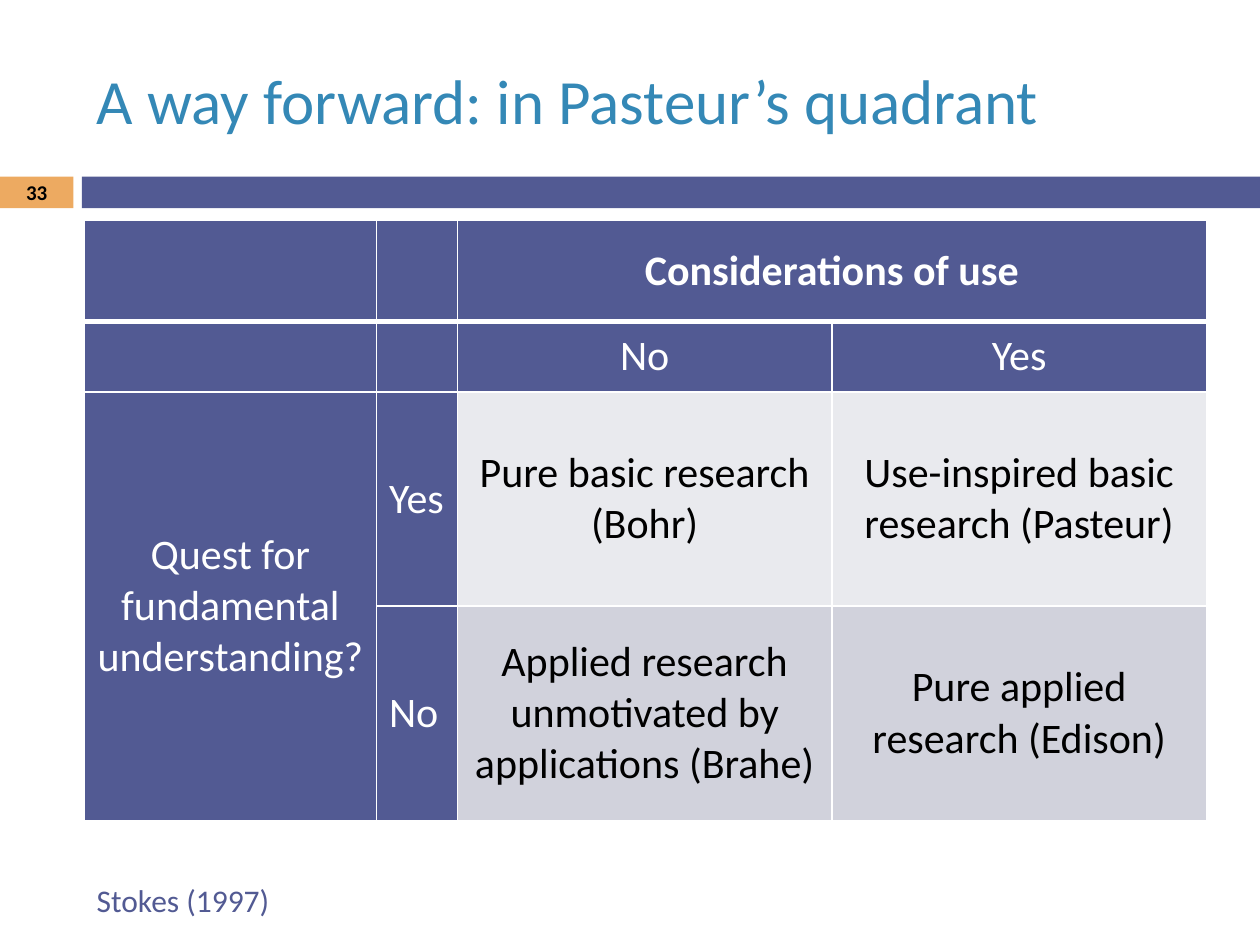
from lxml.etree import SubElement
from pptx import Presentation
from pptx.dml.color import RGBColor
from pptx.enum.shapes import MSO_SHAPE
from pptx.enum.text import MSO_ANCHOR, MSO_AUTO_SIZE, PP_ALIGN
from pptx.oxml.ns import qn
from pptx.util import Cm, Pt

COLORS = {
    "title": "3488B6", "indigo": "525A93", "orange": "EDAA61",
    "upper": "E9EAEE", "lower": "D1D2DC", "white": "FFFFFF", "black": "000000",
}
LEFT, WIDTH = Cm(1.7), Cm(22.66)


def write(frame, text, color, size, bold=False, align=PP_ALIGN.LEFT):
    frame.word_wrap = True
    para = frame.paragraphs[0]
    para.alignment = align
    span = para.add_run()
    span.text = text
    span.font.color.rgb = RGBColor.from_string(COLORS[color])
    formats = {"name": "Calibri", "size": Pt(size), "bold": bold}
    for name, value in formats.items():
        setattr(span.font, name, value)


def draw_borders(cell, bottom_width):
    """Give a cell white borders; call before its fill is set."""
    properties = cell._tc.get_or_add_tcPr()
    for side, width in {"L": 1, "R": 1, "T": 1, "B": bottom_width}.items():
        line = SubElement(properties, qn(f"a:ln{side}"), w=str(Pt(width)))
        fill = SubElement(line, qn("a:solidFill"))
        SubElement(fill, qn("a:srgbClr"), val=COLORS["white"])


deck = Presentation()
deck.slide_width, deck.slide_height = Cm(25.4), Cm(19.05)
page = deck.slides.add_slide(deck.slide_layouts[5])

# Band under the title
for left, width, color in [(0, 1.48, "orange"), (1.65, 23.75, "indigo")]:
    band = page.shapes.add_shape(
        MSO_SHAPE.RECTANGLE, Cm(left), Cm(3.56), Cm(width), Cm(0.64))
    band.shadow.inherit = False
    band.fill.solid()
    band.fill.fore_color.rgb = RGBColor.from_string(COLORS[color])
    band.line.fill.background()

title = page.shapes.title
title_place = {"left": LEFT, "top": Cm(0.64), "width": WIDTH, "height": Cm(2.74)}
for name, value in title_place.items():
    setattr(title, name, value)
title.text_frame.auto_size = MSO_AUTO_SIZE.NONE
title.text_frame.vertical_anchor = MSO_ANCHOR.MIDDLE
write(title.text_frame, "A way forward: in Pasteur’s quadrant", "title", 36)

# Quadrant table
ROWS = [
    ["", "", "Considerations of use", ""],
    ["", "", "No", "Yes"],
    ["Quest for fundamental understanding?", "Yes",
     "Pure basic research (Bohr)", "Use-inspired basic research (Pasteur)"],
    ["", "No", "Applied research unmotivated by applications (Brahe)",
     "Pure applied research (Edison)"],
]
COLUMN_WIDTHS = [5.89, 1.63, 7.55, 7.55]
ROW_HEIGHTS = [2.03, 1.42, 4.32, 4.32]
BODY_FILLS = {2: "upper", 3: "lower"}

table = page.shapes.add_table(
    len(ROWS), len(COLUMN_WIDTHS), LEFT, Cm(4.45), WIDTH, Cm(sum(ROW_HEIGHTS))).table
for column, width in zip(table.columns, COLUMN_WIDTHS):
    column.width = Cm(width)
for row, height in zip(table.rows, ROW_HEIGHTS):
    row.height = Cm(height)
table.cell(0, 2).merge(table.cell(0, 3))
table.cell(2, 0).merge(table.cell(3, 0))

for r, texts in enumerate(ROWS):
    for c, text in enumerate(texts):
        cell = table.cell(r, c)
        in_body = r >= 2 and c >= 2
        draw_borders(cell, 3 if r == 0 else 1)
        cell.fill.solid()
        fill_name = BODY_FILLS[r] if in_body else "indigo"
        cell.fill.fore_color.rgb = RGBColor.from_string(COLORS[fill_name])
        cell.vertical_anchor = MSO_ANCHOR.MIDDLE
        if text:
            write(cell.text_frame, text, "black" if in_body else "white", 24,
                  bold=r == 0, align=PP_ALIGN.LEFT if c == 1 else PP_ALIGN.CENTER)

source = page.shapes.add_textbox(LEFT, Cm(17.63), Cm(4.8), Cm(1.02))
write(source.text_frame, "Stokes (1997)", "indigo", 18)

number = page.shapes.add_textbox(0, Cm(3.53), Cm(1.48), Cm(0.69))
number.text_frame.vertical_anchor = MSO_ANCHOR.MIDDLE
write(number.text_frame, "33", "black", 12, bold=True, align=PP_ALIGN.CENTER)

deck.save("out.pptx")
